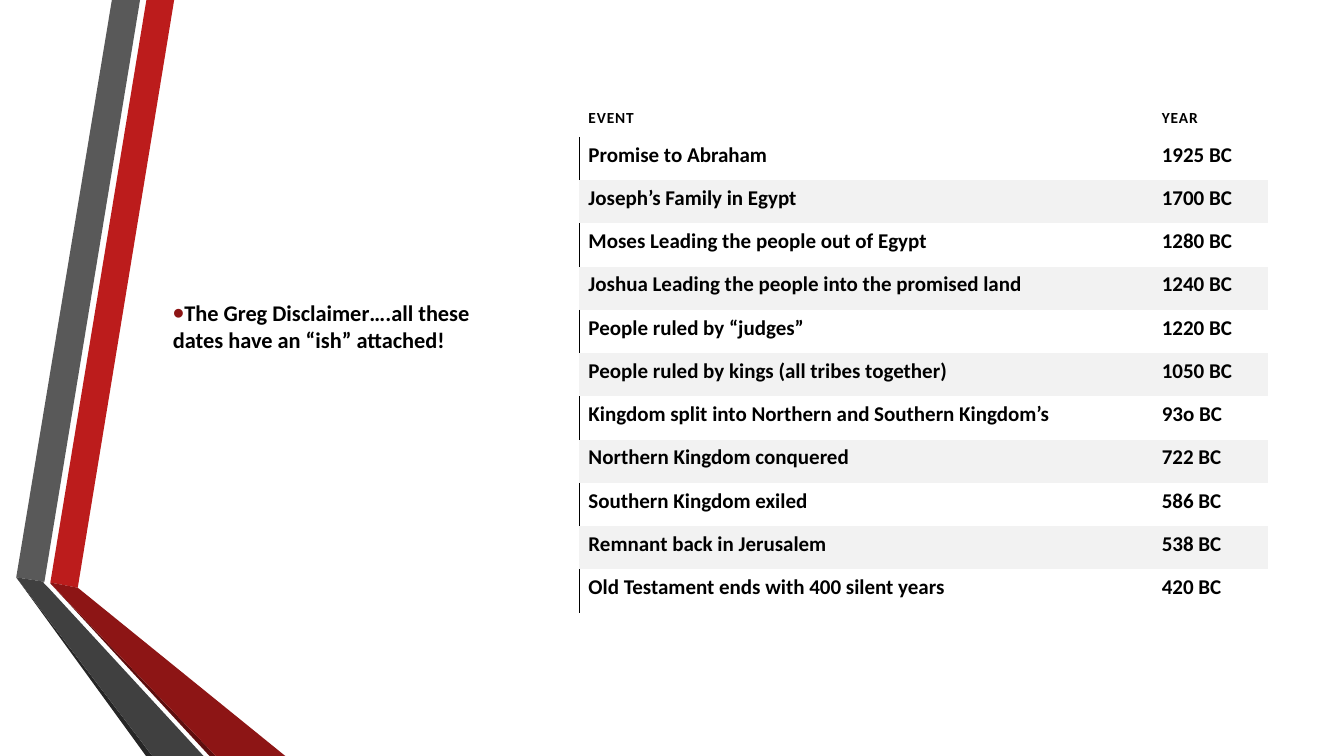
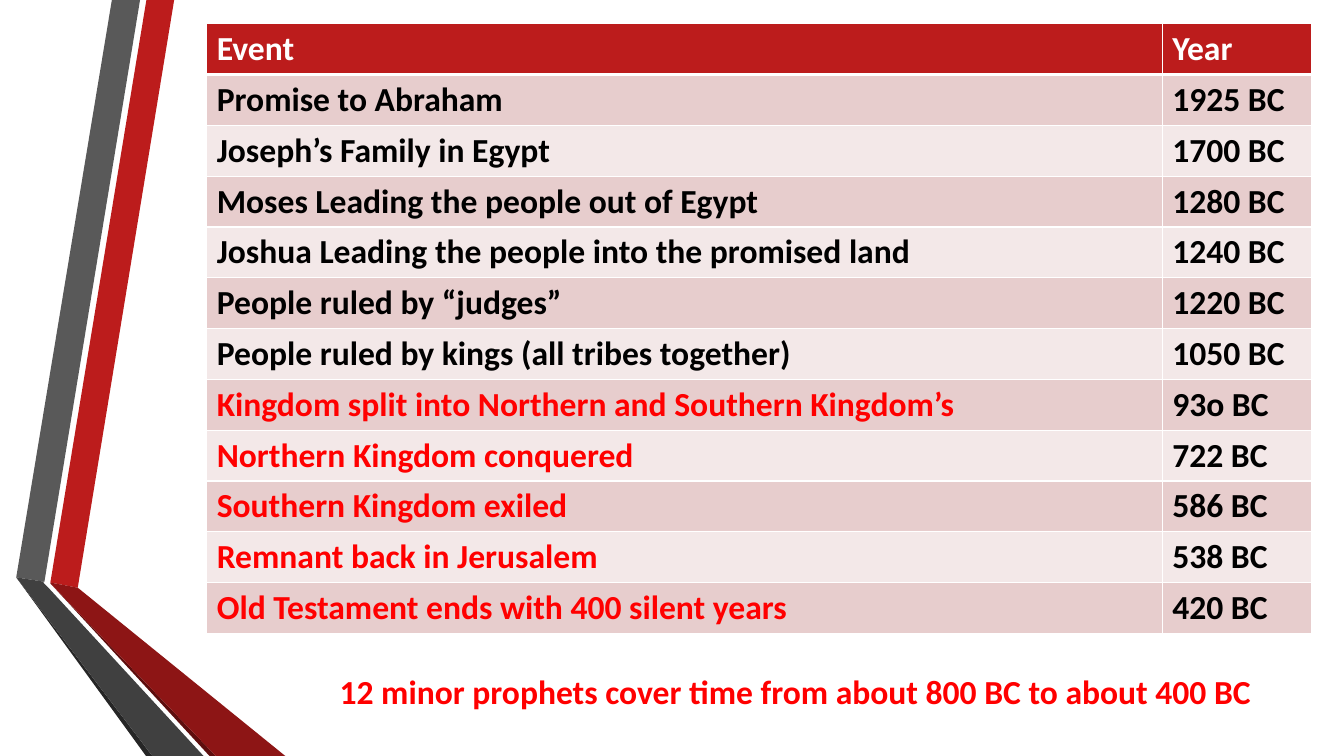
from dataclasses import dataclass

from lxml import etree
from pptx import Presentation
from pptx.dml.color import RGBColor
from pptx.enum.text import MSO_ANCHOR
from pptx.oxml.ns import qn
from pptx.util import Cm, Pt

TOP, BOTTOM = MSO_ANCHOR.TOP, MSO_ANCHOR.BOTTOM
NO_STYLE = "{2D5ABB26-0587-4C30-8999-92F81FD0307C}"
WIDE, HIGH = 33.87, 19.05


@dataclass(frozen=True)
class Theme:
    font: str = "Calibri"
    black: str = "000000"
    white: str = "FFFFFF"
    alert: str = "FF0000"
    red: str = "BC1C1C"
    maroon: str = "8D1515"
    wine: str = "5E0E0E"
    gray: str = "595959"
    slate: str = "404040"
    coal: str = "262626"
    stripe: str = "F2F2F2"
    rose: str = "E7CDCD"
    blush: str = "F3E8E8"
    tiny: float = 11
    small: float = 15
    body: float = 16
    large: float = 24


THEME = Theme()

# Ribbon outlines in centimetres, from back to front
RIBBON = (
    (THEME.red, ((1.27, 14.68), (1.96, 14.81), (4.39, 0), (3.69, 0))),
    (THEME.gray, ((3.53, 0), (2.82, 0), (0.41, 14.55), (1.12, 14.66))),
    (THEME.coal, ((0.41, 14.55), (3.68, HIGH), (3.84, HIGH))),
    (THEME.wine, ((1.27, 14.7), (5.28, HIGH), (5.44, HIGH))),
    (THEME.maroon, ((1.27, 14.7), (5.44, HIGH), (7.19, HIGH),
                    (1.96, 14.81), (1.27, 14.68))),
    (THEME.slate, ((5.13, HIGH), (1.22, 14.81), (1.09, 14.68),
                   (1.12, 14.66), (0.41, 14.55), (3.84, HIGH))),
)

EVENTS = (
    ("Promise to Abraham", "1925 BC"),
    ("Joseph’s Family in Egypt", "1700 BC"),
    ("Moses Leading the people out of Egypt", "1280 BC"),
    ("Joshua Leading the people into the promised land", "1240 BC"),
    ("People ruled by “judges”", "1220 BC"),
    ("People ruled by kings (all tribes together)", "1050 BC"),
    ("Kingdom split into Northern and Southern Kingdom’s", "93o BC"),
    ("Northern Kingdom conquered", "722 BC"),
    ("Southern Kingdom exiled", "586 BC"),
    ("Remnant back in Jerusalem", "538 BC"),
    ("Old Testament ends with 400 silent years", "420 BC"),
)
SPLIT = 7  # table row where the age of the prophets starts


def add(parent, tag, **attrs):
    return etree.SubElement(parent, qn(tag), attrs)


class Deck:
    def __init__(self, theme):
        self.theme = theme
        self.file = Presentation()
        self.file.slide_width, self.file.slide_height = Cm(WIDE), Cm(HIGH)
        self.slide = None

    def start(self):
        """Open a blank slide with the ribbon at its left."""
        self.slide = self.file.slides.add_slide(self.file.slide_layouts[6])
        group = self.slide.shapes.add_group_shape()
        for color, points in RIBBON:
            first, *rest = [(Cm(x), Cm(y)) for x, y in points]
            pen = group.shapes.build_freeform(*first)
            pen.add_line_segments(rest)
            band = pen.convert_to_shape()
            band.shadow.inherit = False
            band.fill.solid()
            band.fill.fore_color.rgb = RGBColor.from_string(color)
            band.line.fill.background()

    def label(self, frame, text, size, color):
        frame.text = text
        para = frame.paragraphs[0]
        font = para.runs[0].font
        font.name, font.size, font.bold = self.theme.font, Pt(size), True
        font.color.rgb = RGBColor.from_string(color)
        return para

    def text(self, left, top, width, height, text, size, color):
        box = self.slide.shapes.add_textbox(
            Cm(left), Cm(top), Cm(width), Cm(height))
        box.text_frame.word_wrap = True
        return self.label(box.text_frame, text, size, color)

    def bullet(self, para):
        para.space_before, para.space_after = Pt(3), Pt(6)
        props = para._p.get_or_add_pPr()
        add(add(props, "a:buClr"), "a:srgbClr", val=self.theme.maroon)
        add(props, "a:buSzPct", val="145000")
        add(props, "a:buFont", typeface="Arial")
        add(props, "a:buChar", char="•")

    def table(self, left, top, widths, heights):
        """Add a table without style; return its rows of cells."""
        frame = self.slide.shapes.add_table(
            len(heights), len(widths), Cm(left), Cm(top),
            Cm(sum(widths)), Cm(sum(heights)))
        table = frame.table
        table.first_row = table.horz_banding = False
        table._tbl.tblPr.find(qn("a:tableStyleId")).text = NO_STYLE
        for col, width in zip(table.columns, widths):
            col.width = Cm(width)
        for row, height in zip(table.rows, heights):
            row.height = Cm(height)
        return [list(row.cells) for row in table.rows]

    def cell(self, cell, text, size, color, fill=None, edges=()):
        """Fill one cell; edges are (side, color, points) in L, R, T, B order."""
        para = self.label(cell.text_frame, text, size, color)
        props = cell._tc.get_or_add_tcPr()
        for side, tint, width in edges:
            line = add(props, "a:ln" + side, w=str(int(Pt(width))))
            add(add(line, "a:solidFill"), "a:srgbClr", val=tint)
        if fill:
            cell.fill.solid()
            cell.fill.fore_color.rgb = RGBColor.from_string(fill)
        else:
            cell.fill.background()
        return para


def plain(deck):
    look = deck.theme
    deck.start()
    note = deck.text(4.11, 7.42, 9.27, 8.69,
                     "The Greg Disclaimer….all these dates have an “ish” attached!",
                     look.body, look.black)
    deck.bullet(note)
    rows = deck.table(14.6, 2.41, (14.45, 2.9), [1.04] + [1.09] * len(EVENTS))
    for i, (cells, words) in enumerate(zip(rows, (("EVENT", "YEAR"),) + EVENTS)):
        head = i == 0
        for j, (cell, word) in enumerate(zip(cells, words)):
            mark = i % 2 == 1 and j == 0
            para = deck.cell(
                cell, word, look.tiny if head else look.small, look.black,
                look.stripe if i % 2 == 0 and not head else None,
                [("L", look.black, 1)] if mark else ())
            cell.margin_left = cell.margin_right = cell.margin_bottom = Cm(0.23)
            cell.margin_top = Cm(0.23 if head else 0.13)
            cell.vertical_anchor = BOTTOM if head else TOP
            if head:
                para.runs[0]._r.get_or_add_rPr().set("spc", "60")


def vivid(deck):
    look = deck.theme
    deck.start()
    rows = deck.table(5.21, 0.6, (24.08, 3.76), [1.28] * (len(EVENTS) + 1))
    for i, (cells, words) in enumerate(zip(rows, (("Event", "Year"),) + EVENTS)):
        fill = look.rose if i % 2 else look.blush
        if i == 0:
            fill = look.red
        for j, (cell, word) in enumerate(zip(cells, words)):
            color = look.alert if i >= SPLIT and j == 0 else look.black
            if i == 0:
                color = look.white
            edges = [(side, look.white, 3 if (side, i) in (("B", 0), ("T", 1)) else 1)
                     for side in "LRTB"]
            deck.cell(cell, word, look.large, color, fill, edges)
    deck.text(8.31, 16.79, 24.59, 1.27,
              "12 minor prophets cover time from about 800 BC to about 400 BC",
              look.large, look.alert)


def main():
    deck = Deck(THEME)
    plain(deck)
    vivid(deck)
    deck.file.save("out.pptx")


if __name__ == "__main__":
    main()
